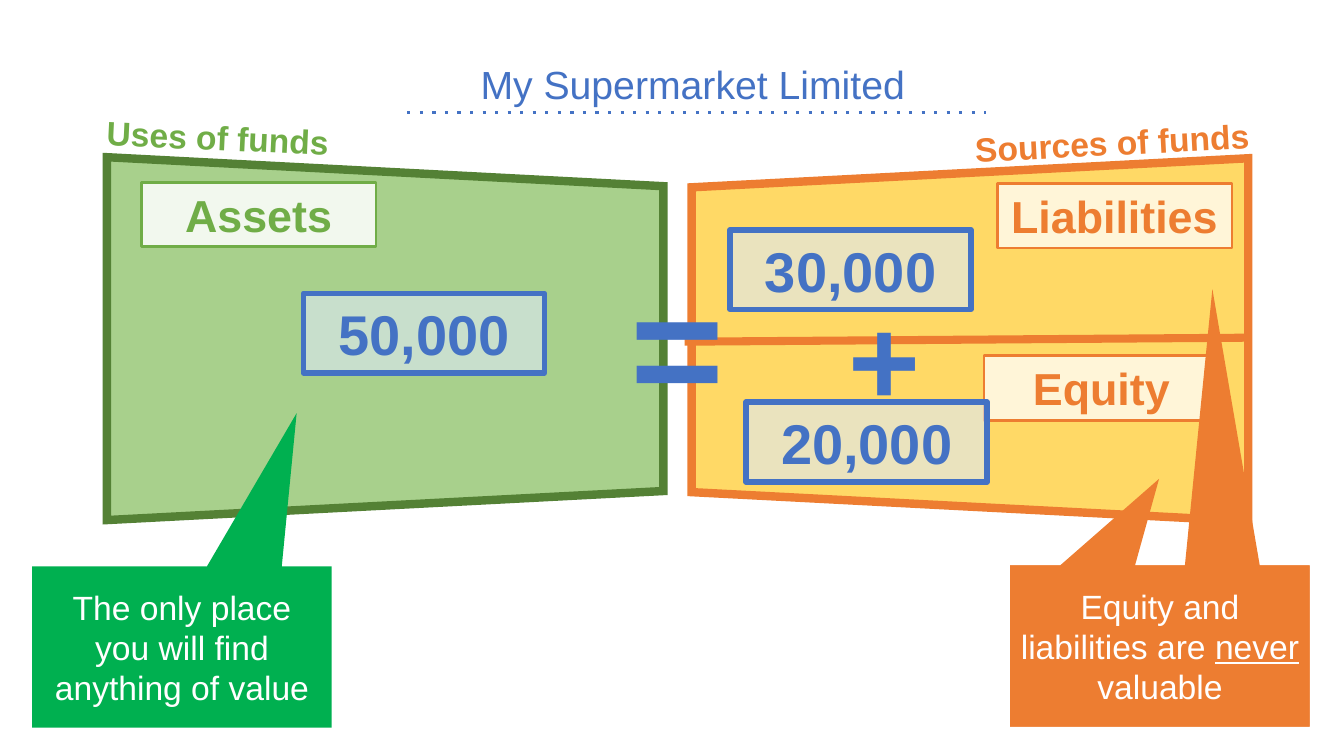
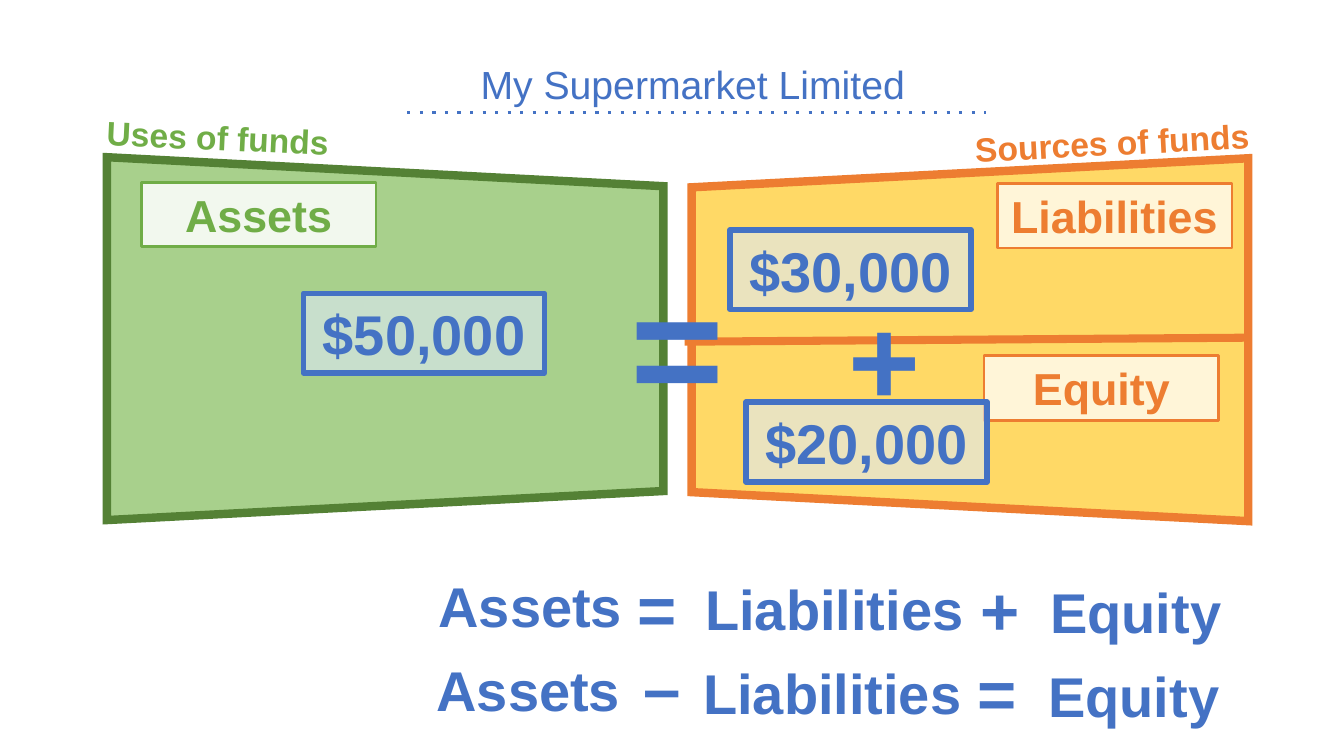
import pptx
import pptx.util
import pptx.dml.color
import pptx.enum.shapes
import pptx.enum.text
import pptx.oxml
import pptx.oxml.ns

Inches = pptx.util.Inches
Pt = pptx.util.Pt
SHAPE = pptx.enum.shapes.MSO_SHAPE
ANCHOR = pptx.enum.text.MSO_ANCHOR
ALIGN = pptx.enum.text.PP_ALIGN
qn = pptx.oxml.ns.qn

# Shared look
FONT = "Arial"
COLORS = {
    "blue": "4472C4", "pale_blue": "DDEAF6", "white": "FFFFFF",
    "green": "70AD47", "dark_green": "548135", "light_green": "A8D08C",
    "bright_green": "00B050", "orange": "ED7D31", "yellow": "FFD966",
}
DRAWING_NS = pptx.oxml.ns.nsdecls("a")
TEXT_SHADOW = (
    f'<a:effectLst {DRAWING_NS}>'
    '<a:outerShdw blurRad="50800" dist="38100" dir="2700000" algn="tl">'
    '<a:srgbClr val="000000"><a:alpha val="40000"/></a:srgbClr>'
    '</a:outerShdw></a:effectLst>'
)


def rgb(color):
    return pptx.dml.color.RGBColor.from_string(COLORS[color])


def element(tag, attributes=""):
    return pptx.oxml.parse_xml(f"<a:{tag} {DRAWING_NS} {attributes}/>")


def write(shape, text, size, color="blue", bold=False, align=ALIGN.CENTER,
          anchor=ANCHOR.TOP, underlined="", shadow=False):
    """Fill a shape with one formatted paragraph; one word may be underlined."""
    frame = shape.text_frame
    frame.word_wrap = True
    frame.auto_size = pptx.enum.text.MSO_AUTO_SIZE.NONE
    frame.vertical_anchor = anchor
    paragraph = frame.paragraphs[0]
    paragraph.alignment = align
    parts = text.partition(underlined) if underlined else (text,)
    for part in parts:
        run = paragraph.add_run()
        run.text = part
        run.font.name = FONT
        run.font.size = Pt(size)
        run.font.bold = bold
        run.font.underline = bool(underlined) and part == underlined
        run.font.color.rgb = rgb(color)
        if shadow:
            color_fill = run.font._element.find(qn("a:solidFill"))
            color_fill.addnext(pptx.oxml.parse_xml(TEXT_SHADOW))


def add_text(slide, text, box, size, rotation=0, **text_format):
    textbox = slide.shapes.add_textbox(*map(Inches, box))
    textbox.rotation = rotation
    write(textbox, text, size, **text_format)


def add_block(slide, preset, box, fill, line=None, width=0, opacity=100):
    """Add a filled preset shape, optionally outlined or see-through."""
    block = slide.shapes.add_shape(preset, *map(Inches, box))
    block.shadow.inherit = False
    block.fill.solid()
    block.fill.fore_color.rgb = rgb(fill)
    if opacity < 100:
        fill_color = block._element.spPr.find(qn("a:solidFill"))[0]
        fill_color.append(element("alpha", f'val="{opacity * 1000}"'))
    if line:
        block.line.color.rgb = rgb(line)
        block.line.width = Pt(width)
    else:
        block.line.fill.background()
    return block


def add_line(slide, start, end, color, width, dash=None):
    line = slide.shapes.add_connector(
        pptx.enum.shapes.MSO_CONNECTOR.STRAIGHT, *map(Inches, start + end))
    line.line.color.rgb = rgb(color)
    line.line.width = Pt(width)
    if dash:
        line.line._get_or_add_ln().append(
            element("prstDash", f'val="{dash}"'))
    line._element.spPr.append(element("effectLst"))


def add_panel(slide, box, rotation, fill, line):
    panel = add_block(slide, SHAPE.TRAPEZOID, box, fill, line, 6)
    panel.rotation = rotation
    panel.adjustments[0] = 0.08
    panel.line._get_or_add_ln().append(element("miter", 'lim="800000"'))


def add_label(slide, text, left, top, color, opacity):
    label = add_block(slide, SHAPE.RECTANGLE, (left, top, 2.33, 0.64),
                      "white", color, 2, opacity)
    write(label, text, 32, color=color, bold=True)


def add_amount(slide, text, left, top):
    amount = add_block(slide, SHAPE.RECTANGLE, (left, top, 2.39, 0.79),
                       "pale_blue", "blue", 4, 61)
    write(amount, text, 40, bold=True, anchor=ANCHOR.MIDDLE)


def add_callout(slide, left, top, tip, fill, text="", underlined=""):
    callout = add_block(slide, SHAPE.RECTANGULAR_CALLOUT,
                        (left, top, 2.97, 1.6), fill)
    callout.adjustments[0], callout.adjustments[1] = tip
    if text:
        write(callout, text, 24, color="white", anchor=ANCHOR.MIDDLE,
              underlined=underlined)


def add_balance_slide(deck, currency=""):
    """Add the title and the balance diagram that every slide shows."""
    slide = deck.slides.add_slide(deck.slide_layouts[5])
    title = slide.shapes.title
    title.left, title.top, title.width, title.height = map(
        Inches, (4, 0.55, 5.74, 0.57))
    write(title, "My Supermarket Limited", 28)
    add_line(slide, (4.04, 1.12), (9.78, 1.12), "blue", 2.25, "dot")

    # Two sides of the balance
    add_panel(slide, (2.02, 0.6, 3.6, 5.52), 90, "light_green", "dark_green")
    add_panel(slide, (7.82, 0.61, 3.6, 5.52), 270, "yellow", "orange")
    add_text(slide, "Uses of funds", (0.96, 1.11, 2.43, 0.5), 24, 2.7,
             color="green", bold=True, align=ALIGN.LEFT)
    add_text(slide, "Sources of funds", (9.57, 1.16, 2.95, 0.5), 24, 357.1,
             color="orange", bold=True, align=ALIGN.LEFT)
    add_label(slide, "Assets", 1.4, 1.81, "green", 86)
    add_label(slide, "Liabilities", 9.89, 1.82, "orange", 75)
    add_label(slide, "Equity", 9.76, 3.53, "orange", 75)
    add_line(slide, (6.79, 3.39), (12.38, 3.35), "orange", 5.75)

    # Amounts and the signs between them
    for number, left, top in (("50,000", 3.01, 2.91), ("30,000", 7.24, 2.28),
                              ("20,000", 7.4, 3.99)):
        add_amount(slide, currency + number, left, top)
    for sign, left, top, size in (("+", 8.12, 2.98, 88),
                                  ("=", 6.07, 2.84, 115)):
        add_text(slide, sign, (left, top, 1.3, 1.1), size, bold=True,
                 anchor=ANCHOR.MIDDLE, shadow=True)
    return slide


def add_equation(slide, left, top, signs):
    """Add one line of the accounting equation with its two signs."""
    for term, offset, drop, width in (("Assets", 0, 0, 2.04),
                                      ("Liabilities", 2.64, 0.03, 2.79),
                                      ("Equity", 6.07, 0.06, 1.91)):
        add_text(slide, term, (left + offset, top + drop, width, 0.77), 40,
                 bold=True)
    for sign, sign_left, sign_top in signs:
        add_text(slide, sign, (sign_left, sign_top, 0.61, 0.91), 48,
                 bold=True, align=ALIGN.LEFT)


def main():
    deck = pptx.Presentation()
    deck.slide_width, deck.slide_height = Inches(13.33), Inches(7.5)

    # Where value is found
    value_slide = add_balance_slide(deck)
    add_callout(value_slide, 0.32, 5.62, (0.383, -1.451), "bright_green",
                "The only place you will find anything of value")
    add_callout(value_slide, 10.02, 5.61, (-0.003, -1.037), "orange")
    add_callout(value_slide, 10.02, 5.61, (0.175, -2.214), "orange",
                "Equity and liabilities are never valuable", "never")

    # The equation and its rearranged form
    equation_slide = add_balance_slide(deck, "$")
    add_equation(equation_slide, 4.24, 5.62,
                 (("=", 6.22, 5.58), ("+", 9.63, 5.59)))
    add_equation(equation_slide, 4.22, 6.45,
                 (("–", 6.28, 6.35), ("=", 9.6, 6.41)))

    deck.save("out.pptx")


if __name__ == "__main__":
    main()
